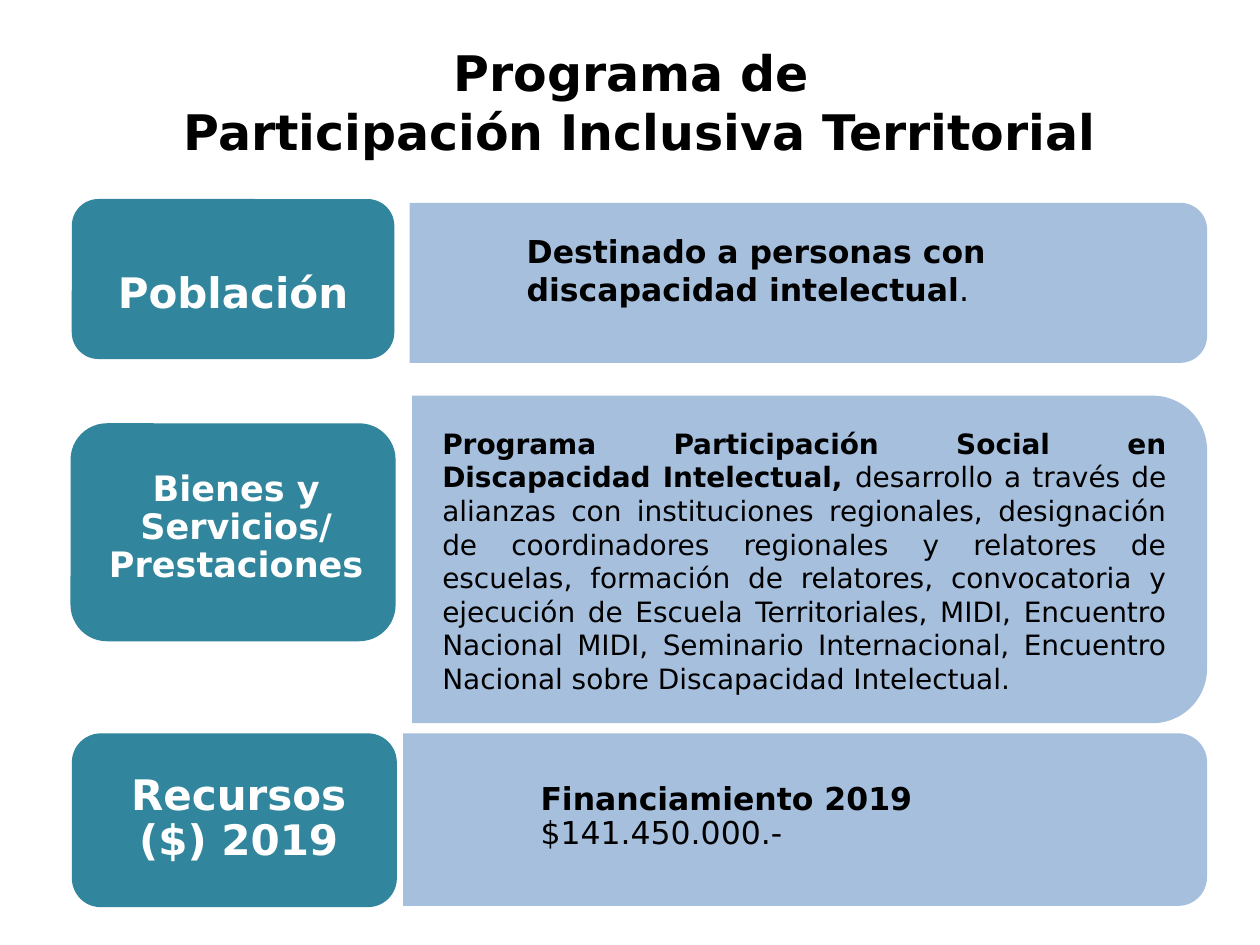
import pptx
import pptx.dml.color
import pptx.enum.shapes
import pptx.enum.text
import pptx.oxml
import pptx.oxml.ns
import pptx.util

PX = 9144  # 100 px to the inch
FONT = "DejaVu Sans"
BLACK = pptx.dml.color.RGBColor(0x00, 0x00, 0x00)
WHITE = pptx.dml.color.RGBColor(0xFF, 0xFF, 0xFF)
TEAL = pptx.dml.color.RGBColor(0x31, 0x85, 0x9C)
BLUE = pptx.dml.color.RGBColor(0x4F, 0x81, 0xBD)
SHAPES = pptx.enum.shapes.MSO_SHAPE
ALIGN = pptx.enum.text.PP_ALIGN
ANCHOR = pptx.enum.text.MSO_ANCHOR
CORNER = 0.167

# Boxes are (left, top, width, height); text boxes are relative to their panel.
# A line is a list of (text, bold) runs.
ROWS = [
    {
        "label": (57, 158, 256, 127), "label_text": (3, 9, 250, 134),
        "label_lines": ["Población"], "label_size": 24, "label_inset": (13, 7),
        "panel": (325, 161, 633, 127), "panel_text": (16, 5, 590, 96),
        "panel_lines": [[("Destinado a personas con discapacidad intelectual", True),
                         (".", False)]],
        "size": 18, "indent": 50, "spacing": 1.0, "align": ALIGN.LEFT,
    },
    {
        "label": (56, 336, 258, 173), "label_text": (6, 7, 251, 152),
        "label_lines": ["Bienes y Servicios/", "Prestaciones"],
        "label_size": 20, "label_inset": (10, 5),
        "panel": (327, 314, 631, 260), "panel_text": (-22, 9, 648, 244),
        "panel_lines": [[
            ("Programa Participación Social en Discapacidad Intelectual, ", True),
            ("desarrollo a través de alianzas con instituciones regionales, "
             "designación de coordinadores regionales y relatores de escuelas, "
             "formación de relatores, convocatoria y ejecución de Escuela "
             "Territoriales, MIDI, Encuentro Nacional MIDI, Seminario "
             "Internacional, Encuentro Nacional sobre Discapacidad Intelectual.",
             False)]],
        "size": 16, "indent": 19, "spacing": 1.0, "align": ALIGN.JUSTIFY,
    },
    {
        "label": (57, 582, 258, 138), "label_text": (6, 17, 253, 103),
        "label_lines": ["Recursos ($) 2019"],
        "label_size": 24, "label_inset": (10, 5),
        "panel": (320, 582, 638, 137), "panel_text": (32, 18, 556, 98),
        "panel_lines": [[("Financiamiento 2019", True)],
                        [("$141.450.000.-", False)]],
        "size": 18, "indent": 50, "spacing": 0.9, "align": ALIGN.LEFT,
    },
]


def emu(box):
    return [round(length * PX) for length in box]


def format_font(font, size, color, bold):
    font.name = FONT
    font.size = pptx.util.Pt(size)
    font.color.rgb = color
    font.bold = bold


def add_filled(slide, kind, box, color):
    shape = slide.shapes.add_shape(kind, *emu(box))
    shape.shadow.inherit = False
    shape.fill.solid()
    shape.fill.fore_color.rgb = color
    shape.line.fill.background()
    shape.adjustments[0] = CORNER
    return shape


def add_text(slide, parent, offset, inset, lines, size, color, align, spacing, indent=0):
    """Add a middle-anchored text box placed relative to the parent box."""
    box = (parent[0] + offset[0], parent[1] + offset[1], offset[2], offset[3])
    text_frame = slide.shapes.add_textbox(*emu(box)).text_frame
    text_frame.word_wrap = True
    text_frame.vertical_anchor = ANCHOR.MIDDLE
    text_frame.margin_left = text_frame.margin_right = inset[0] * PX
    text_frame.margin_top = text_frame.margin_bottom = inset[1] * PX
    for index, line in enumerate(lines):
        paragraph = text_frame.add_paragraph() if index else text_frame.paragraphs[0]
        paragraph.alignment = align
        paragraph.line_spacing = spacing
        if indent:
            paragraph._p.get_or_add_pPr().set("marL", str(indent * PX))
        for text, bold in line:
            run = paragraph.add_run()
            run.text = text
            format_font(run.font, size, color, bold)


def add_panel(slide, row):
    """Add the panel, turned a quarter so that its round corners are on the right."""
    left, top, width, height = row["panel"]
    shift = (width - height) / 2
    shape = add_filled(slide, SHAPES.ROUND_2_SAME_RECTANGLE,
                       (left + shift, top - shift, height, width), BLUE)
    shape.adjustments[1] = 0
    shape.rotation = 90
    color = shape._element.spPr.find(".//" + pptx.oxml.ns.qn("a:srgbClr"))
    color.append(pptx.oxml.parse_xml(
        f'<a:alpha {pptx.oxml.ns.nsdecls("a")} val="50000"/>'))
    add_text(slide, row["panel"], row["panel_text"], (27, 14), row["panel_lines"],
             row["size"], BLACK, row["align"], row["spacing"], row["indent"])


def add_label(slide, row):
    add_filled(slide, SHAPES.ROUNDED_RECTANGLE, row["label"], TEAL)
    lines = [[(text, True)] for text in row["label_lines"]]
    add_text(slide, row["label"], row["label_text"], row["label_inset"], lines,
             row["label_size"], WHITE, ALIGN.CENTER, 0.9)


def set_title(slide, box):
    title = slide.shapes.title
    title.left, title.top, title.width, title.height = emu(box)
    text_frame = title.text_frame
    text_frame.text = "Programa de \nParticipación Inclusiva Territorial"
    text_frame.word_wrap = True
    text_frame.auto_size = pptx.enum.text.MSO_AUTO_SIZE.NONE
    text_frame.vertical_anchor = ANCHOR.TOP
    for paragraph in text_frame.paragraphs:
        paragraph.alignment = ALIGN.CENTER
        for run in paragraph.runs:
            format_font(run.font, 28, BLACK, True)


def main():
    presentation = pptx.Presentation()
    presentation.slide_width, presentation.slide_height = emu((1000, 750))
    slide = presentation.slides.add_slide(presentation.slide_layouts[5])
    set_title(slide, (83, 29, 849, 104))
    for row in ROWS:
        add_panel(slide, row)
        add_label(slide, row)
    presentation.save("out.pptx")


if __name__ == "__main__":
    main()
